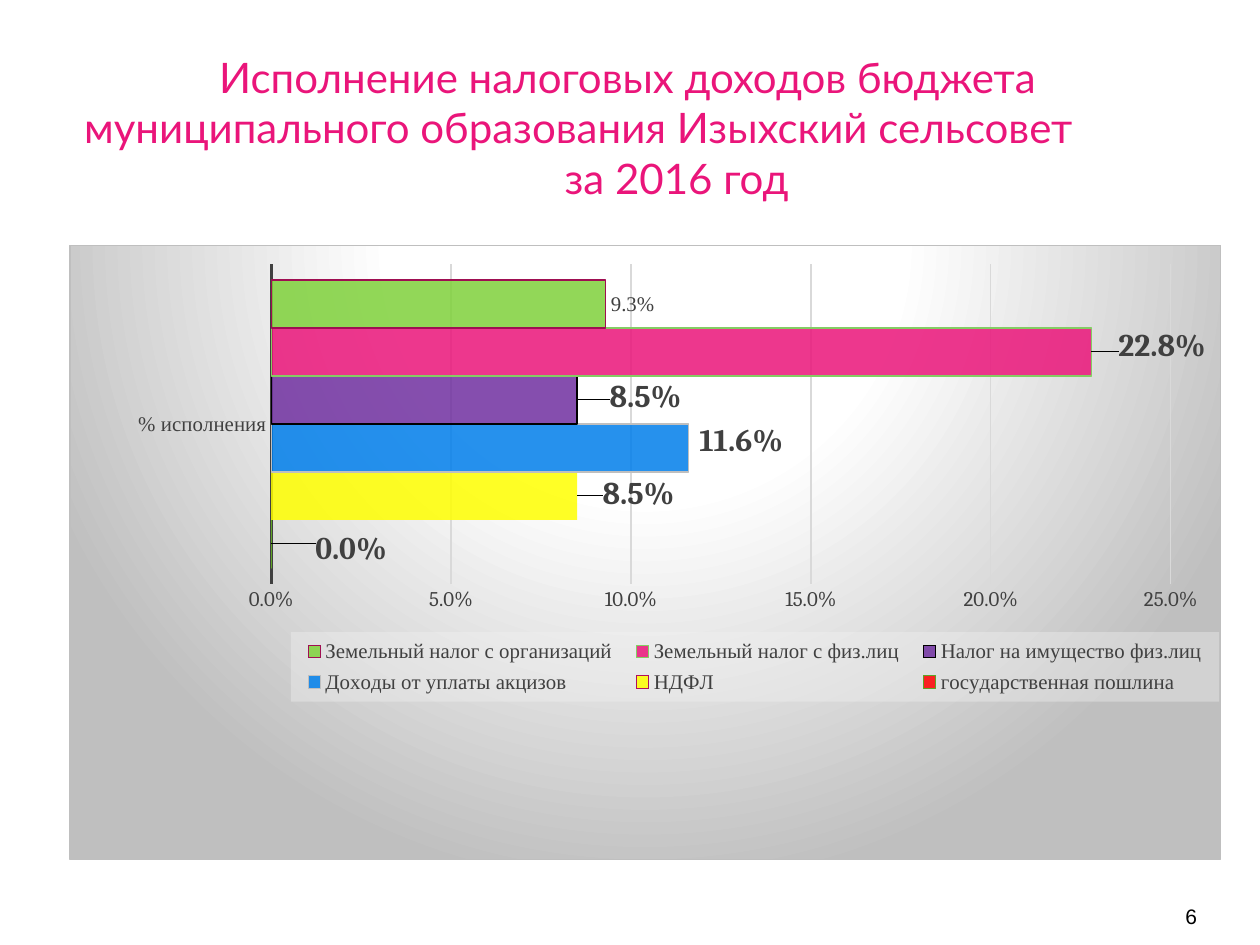
from lxml import etree
from pptx import Presentation
from pptx import util as u
from pptx.chart.data import CategoryChartData
from pptx.dml.color import RGBColor
from pptx.enum import chart as ch, text
from pptx.oxml import ns, parse_xml

COLORS = {"title": "EA157A", "text": "404040", "number": "000000",
          "grid": "D9D9D9", "border": "BFBFBF", "light": "FFFFFF",
          "legend": "F2F2F2"}
SMALL, LARGE = 11.9, 18

# name, value, fill, outline, label shift as shares of the chart
SERIES = [
    ("государственная пошлина", 0, "FF0000", "5FA326", (0.034, 0.008)),
    ("НДФЛ", 0.085, "FFFF00", "B0105C", (0.018, -0.004)),
    ("Доходы от уплаты акцизов", 0.116, "007EEB", "BFBFBF", (0.005, -0.012)),
    ("Налог на имущество физ.лиц", 0.085, "7030A0", "000000", (0.024, -0.005)),
    ("Земельный налог с физ.лиц", 0.228, "EA157A", "84CC63", (0.019, -0.01)),
    ("Земельный налог с организаций", 0.093, "7FD13B", "9F0E52", None),
]


def style(font, name, size, color, bold=False):
    font.name, font.size, font.bold = name, u.Pt(size), bold
    font.color.rgb = RGBColor.from_string(color)


def layout(x, y, w=None, h=None, inner=False):
    """Manual chart layout: a frame, or a label shift when w is None."""
    target = '<c:layoutTarget val="inner"/>' if inner else ""
    modes = "" if w is None else '<c:xMode val="edge"/><c:yMode val="edge"/>'
    size = "" if w is None else f'<c:w val="{w}"/><c:h val="{h}"/>'
    return parse_xml(
        f'<c:layout {ns.nsdecls("c")}><c:manualLayout>{target}{modes}'
        f'<c:x val="{x}"/><c:y val="{y}"/>{size}</c:manualLayout></c:layout>')


prs = Presentation()
prs.slide_width, prs.slide_height = u.Inches(10), u.Inches(7.5)
W, H = prs.slide_width, prs.slide_height
slide = prs.slides.add_slide(prs.slide_layouts[6])

# Title: the second line starts at the left, the third is centred further right
sp = slide.shapes.add_textbox(int(W * 0.055), int(H * 0.048), int(W * 0.886), int(H * 0.173))
tf = sp.text_frame
tf.word_wrap = True
lines = [("Исполнение налоговых доходов бюджета", text.PP_ALIGN.CENTER, 0),
         ("муниципального образования Изыхский сельсовет", text.PP_ALIGN.LEFT, 0.002),
         ("за 2016 год", text.PP_ALIGN.CENTER, 0.078)]
for i, (line, align, indent) in enumerate(lines):
    p = tf.add_paragraph() if i else tf.paragraphs[0]
    p.text, p.alignment = line, align
    p._p.get_or_add_pPr().set("marL", str(int(W * indent)))
    style(p.font, "Lato", 24, COLORS["title"])

# Chart
data = CategoryChartData(number_format="0.0%")
data.categories = ["% исполнения"]
for name, value, *_ in SERIES:
    data.add_series(name, [value])
chart = slide.shapes.add_chart(
    ch.XL_CHART_TYPE.BAR_CLUSTERED, int(W * 0.055), int(H * 0.259),
    int(W * 0.914), int(H * 0.651), data).chart
chart.has_title = False
style(chart.font, "Times New Roman", 10, COLORS["number"])

chart.element.find(ns.qn("c:chart")).addnext(parse_xml(
    f'<c:spPr {ns.nsdecls("c", "a")}><a:gradFill><a:gsLst>'
    f'<a:gs pos="0"><a:srgbClr val="{COLORS["light"]}"/></a:gs>'
    f'<a:gs pos="39000"><a:srgbClr val="{COLORS["light"]}"/></a:gs>'
    f'<a:gs pos="100000"><a:srgbClr val="{COLORS["border"]}"/></a:gs></a:gsLst>'
    '<a:path path="circle"><a:fillToRect l="50000" t="-80000" r="50000" b="180000"/></a:path>'
    f'</a:gradFill><a:ln w="9525"><a:solidFill><a:srgbClr val="{COLORS["border"]}"/>'
    '</a:solidFill></a:ln></c:spPr>'))

plot = chart.plots[0]
plot.gap_width, plot.overlap, plot.vary_by_categories = 65, 0, False
plot_area = chart.element.find(".//" + ns.qn("c:plotArea"))
for old in plot_area.findall(ns.qn("c:layout")):
    plot_area.remove(old)
plot_area.insert(0, layout(0.175, 0.031, 0.782, 0.52, inner=True))

for axis, font in ((chart.category_axis, "Times New Roman"), (chart.value_axis, "Cambria")):
    axis.major_tick_mark = axis.minor_tick_mark = ch.XL_TICK_MARK.NONE
    style(axis.tick_labels.font, font, SMALL, COLORS["text"])
line = chart.category_axis.format.line
line.color.rgb, line.width = RGBColor.from_string(COLORS["text"]), u.Pt(1.5)
axis = chart.value_axis
axis.minimum_scale, axis.maximum_scale, axis.major_unit = 0, 0.25, 0.05
axis.tick_labels.number_format = "0.0%"
axis.tick_labels.number_format_is_linked = False
axis.format.line.fill.background()
axis.has_major_gridlines = True
line = axis.major_gridlines.format.line
line.color.rgb, line.width = RGBColor.from_string(COLORS["grid"]), u.Pt(0.75)

for series, (name, value, fill, outline, shift) in zip(plot.series, SERIES):
    series.invert_if_negative = False
    formats = [series.format]
    if name == "НДФЛ":
        formats.append(series.points[0].format)
        formats[1].line.fill.background()
    for fmt in formats:
        fmt.fill.solid()
        fmt.fill.fore_color.rgb = RGBColor.from_string(fill)
    for clr in series._element.iterfind(".//" + ns.qn("a:solidFill") + "/" + ns.qn("a:srgbClr")):
        etree.SubElement(clr, ns.qn("a:alpha"), val="85000")
    series.format.line.color.rgb = RGBColor.from_string(outline)
    series.format.line.width = u.Pt(0.75)

    label_font = ("Cambria", LARGE, COLORS["text"], True) if shift else (
        "Times New Roman", SMALL, COLORS["text"])
    labels = series.data_labels
    labels.show_value = True
    labels.number_format, labels.number_format_is_linked = "0.0%", False
    labels.position = ch.XL_LABEL_POSITION.OUTSIDE_END
    style(labels.font, *label_font)
    if shift:
        label = series.points[0].data_label
        label.position = ch.XL_LABEL_POSITION.OUTSIDE_END
        style(label.font, *label_font)
        series._element.find(f'.//{ns.qn("c:dLbl")}/{ns.qn("c:idx")}').addnext(layout(*shift))

chart.has_legend = True
legend = chart.legend
legend.position = ch.XL_LEGEND_POSITION.BOTTOM
legend.include_in_layout = False
style(legend.font, "Times New Roman", SMALL, COLORS["text"])
el = legend._element
for old in el.findall(ns.qn("c:layout")):
    el.remove(old)
el.find(ns.qn("c:legendPos")).addnext(layout(0.192, 0.63, 0.807, 0.113))
el.find(ns.qn("c:overlay")).addnext(parse_xml(
    f'<c:spPr {ns.nsdecls("c", "a")}><a:solidFill><a:srgbClr val="{COLORS["legend"]}">'
    '<a:alpha val="39000"/></a:srgbClr></a:solidFill><a:ln><a:noFill/></a:ln></c:spPr>'))

# Slide number
sp = slide.shapes.add_textbox(int(W * 0.867), int(H * 0.936), int(W * 0.083), int(H * 0.053))
tf = sp.text_frame
tf.word_wrap = True
tf.vertical_anchor = text.MSO_ANCHOR.BOTTOM
tf.margin_left = tf.margin_right = 0
p = tf.paragraphs[0]
p.text, p.alignment = "6", text.PP_ALIGN.RIGHT
style(p.font, "Arial", 12, COLORS["number"])

prs.save("out.pptx")
